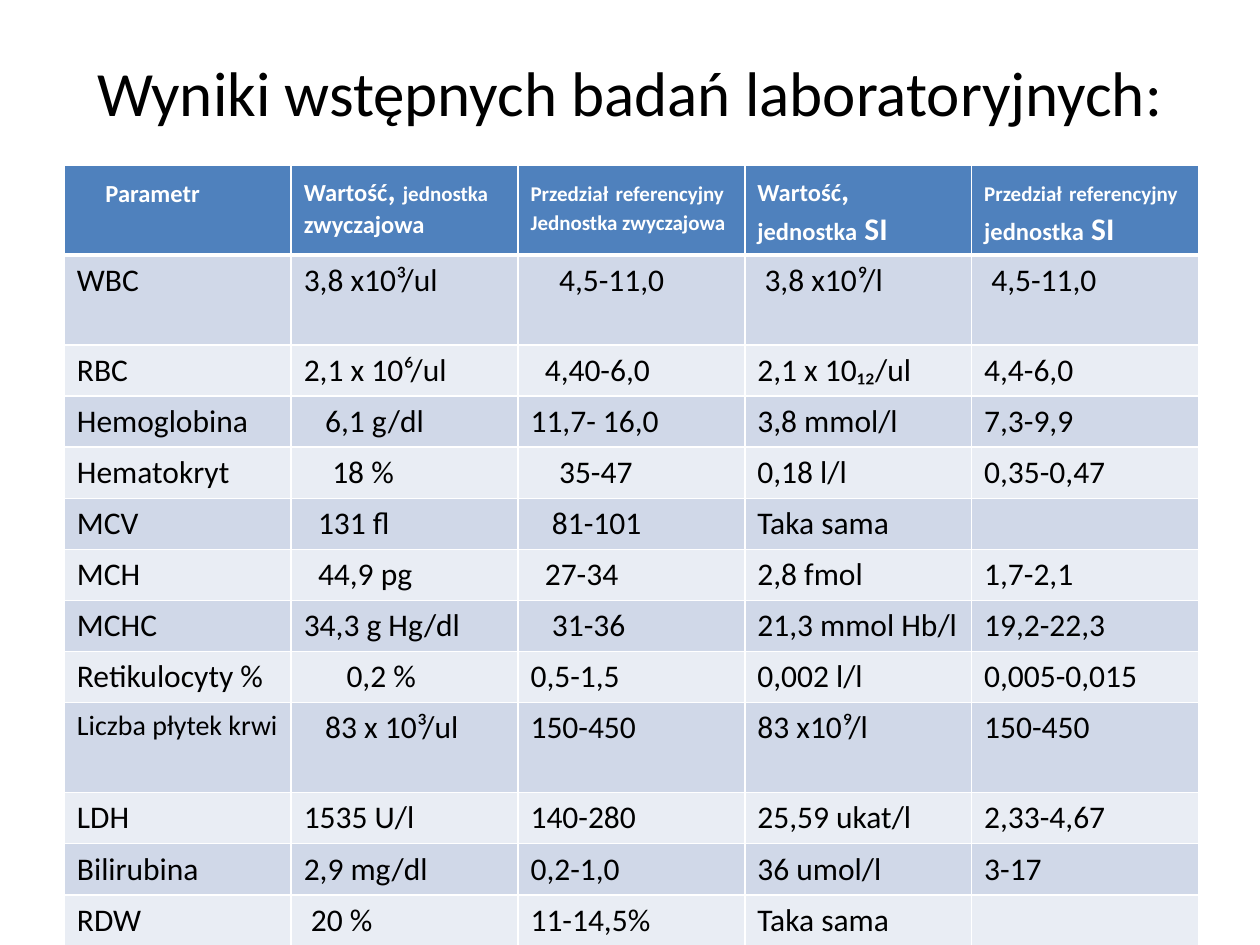
from lxml import etree
from pptx import Presentation
from pptx.dml.color import RGBColor
from pptx.enum import text
from pptx.oxml.ns import qn
from pptx.util import Pt

THEME = {
    "font": "Calibri",
    "black": "000000", "white": "FFFFFF",
    "header": "4F81BD", "bands": ("D0D8E8", "E9EDF4"),
    "title": 36, "body": 18, "label": 16, "medium": 14, "small": 12,
}
BODY, LABEL = THEME["body"], THEME["label"]
MEDIUM, SMALL = THEME["medium"], THEME["small"]

# Content
TITLE = "Wyniki wstępnych badań laboratoryjnych:"
RANGE = [("Przedział", SMALL), (" ", BODY), ("referencyjny", SMALL)]
SI_UNIT = [("jednostka", MEDIUM), (" SI", BODY)]
HEADER = [  # cells > paragraphs > (text, size)
    [[("Parametr", MEDIUM)]],
    [[("Wartość", MEDIUM), (", ", BODY), ("jednostka", SMALL),
      (" ", BODY), ("zwyczajowa", MEDIUM)]],
    [RANGE, [("Jednostka zwyczajowa", SMALL)]],
    [[("Wartość", MEDIUM), (",", BODY)], SI_UNIT],
    [RANGE + [(" ", BODY)] + SI_UNIT],
]
RESULTS = [
    ("WBC", "3,8 x10³/ul", "4,5-11,0", "3,8 x10⁹/l", "4,5-11,0"),
    ("RBC", "2,1 x 10⁶/ul", "4,40-6,0", "2,1 x 10₁₂/ul", "4,4-6,0"),
    ("Hemoglobina", "6,1 g/dl", "11,7- 16,0", "3,8 mmol/l", "7,3-9,9"),
    ("Hematokryt", "18 %", "35-47", "0,18 l/l", "0,35-0,47"),
    ("MCV", "131 fl", "81-101", "Taka sama", ""),
    ("MCH", "44,9 pg", "27-34", "2,8 fmol", "1,7-2,1"),
    ("MCHC", "34,3 g Hg/dl", "31-36", "21,3 mmol Hb/l", "19,2-22,3"),
    ("Retikulocyty %", "0,2 %", "0,5-1,5", "0,002 l/l", "0,005-0,015"),
    ("Liczba płytek krwi", "83 x 10³/ul", "150-450", "83 x10⁹/l", "150-450"),
    ("LDH", "1535 U/l", "140-280", "25,59 ukat/l", "2,33-4,67"),
    ("Bilirubina", "2,9 mg/dl", "0,2-1,0", "36 umol/l", "3-17"),
    ("RDW", "20 %", "11-14,5%", "Taka sama", ""),
]
# Indent steps by column, for the rows that have any
INDENTS = {
    "WBC": (0, 0, 4, 1, 1), "RBC": (0, 0, 2, 0, 0),
    "Hemoglobina": (0, 3, 0, 0, 0), "Hematokryt": (0, 4, 4, 0, 0),
    "MCV": (0, 2, 3, 0, 0), "MCH": (0, 2, 2, 0, 0),
    "MCHC": (0, 0, 3, 0, 0), "Retikulocyty %": (0, 6, 0, 0, 0),
    "Liczba płytek krwi": (0, 3, 0, 0, 0), "RDW": (0, 1, 0, 0, 0),
}
TALL_ROWS = ("WBC", "Liczba płytek krwi")

# Layout, in points
LEFT, TOP, COLUMN = 36.8, 94.6, 129.6
HEADER_HEIGHT, ROW_HEIGHT, TALL_HEIGHT = 50.3, 29.15, 51.4
INDENT_STEP = 4.07
THIN, THICK = 1, 3


def add_run(p, wording, size, color, bold=False):
    r = p.add_run()
    r.text = wording
    r.font.name = THEME["font"]
    r.font.size = Pt(size)
    r.font.bold = bold
    r.font.color.rgb = RGBColor.from_string(color)


def indent(p, steps):
    if steps:
        p._p.get_or_add_pPr().set("marL", str(Pt(steps * INDENT_STEP)))


def style_cell(cell, fill, top=THIN, bottom=THIN):
    tc_pr = cell._tc.get_or_add_tcPr()
    for side, width in (("L", THIN), ("R", THIN), ("T", top), ("B", bottom)):
        line = etree.SubElement(tc_pr, qn(f"a:ln{side}"), w=str(Pt(width)))
        solid = etree.SubElement(line, qn("a:solidFill"))
        etree.SubElement(solid, qn("a:srgbClr"), val=THEME["white"])
    cell.fill.solid()
    cell.fill.fore_color.rgb = RGBColor.from_string(fill)


prs = Presentation()
prs.slide_width, prs.slide_height = Pt(720), Pt(540)
s = prs.slides.add_slide(prs.slide_layouts[5])

# Title
title = s.shapes.title
title.left, title.top, title.width, title.height = Pt(36), Pt(9.4), Pt(648), Pt(85)
title.text_frame.vertical_anchor = text.MSO_ANCHOR.MIDDLE
p = title.text_frame.paragraphs[0]
p.alignment = text.PP_ALIGN.CENTER
add_run(p, TITLE, THEME["title"], THEME["black"])

# Table grid
heights = [HEADER_HEIGHT] + [
    TALL_HEIGHT if row[0] in TALL_ROWS else ROW_HEIGHT for row in RESULTS]
table = s.shapes.add_table(
    len(heights), len(HEADER), Pt(LEFT), Pt(TOP),
    Pt(COLUMN * len(HEADER)), Pt(sum(heights))).table
for column in table.columns:
    column.width = Pt(COLUMN)
for row, height in zip(table.rows, heights):
    row.height = Pt(height)

# Header row
for col, paragraphs in enumerate(HEADER):
    cell = table.cell(0, col)
    style_cell(cell, THEME["header"], bottom=THICK)
    for i, runs in enumerate(paragraphs):
        tf = cell.text_frame
        p = tf.add_paragraph() if i else tf.paragraphs[0]
        for wording, size in runs:
            add_run(p, wording, size, THEME["white"], bold=True)
parameter = table.cell(0, 0).text_frame.paragraphs[0]
indent(parameter, 4)
parameter.line_spacing = Pt(21)  # shares a baseline with the other headings

# Result rows
for i, row in enumerate(RESULTS):
    steps = INDENTS.get(row[0], (0,) * len(row))
    for col, wording in enumerate(row):
        cell = table.cell(i + 1, col)
        style_cell(cell, THEME["bands"][i % 2], top=THIN if i else THICK)
        p = cell.text_frame.paragraphs[0]
        indent(p, steps[col])
        if wording:
            size = LABEL if wording == "Liczba płytek krwi" else BODY
            add_run(p, wording, size, THEME["black"])

prs.save("out.pptx")
